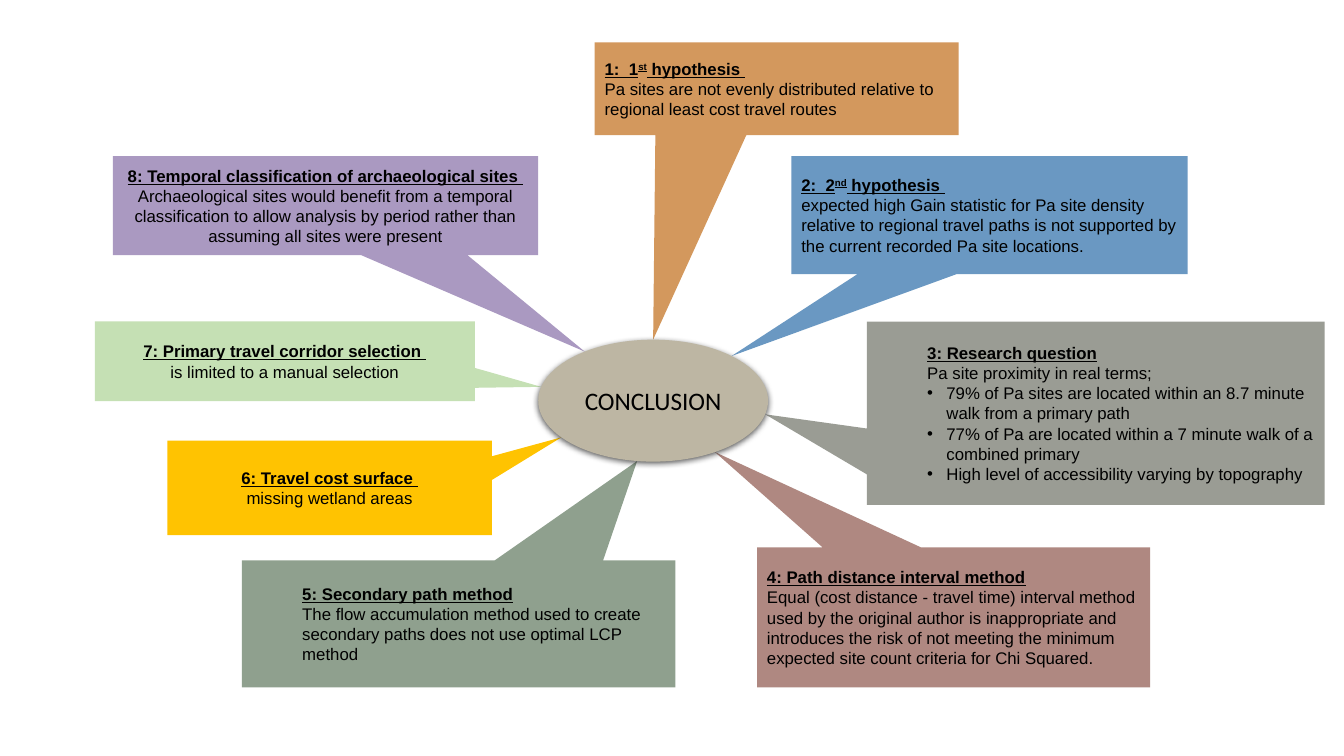
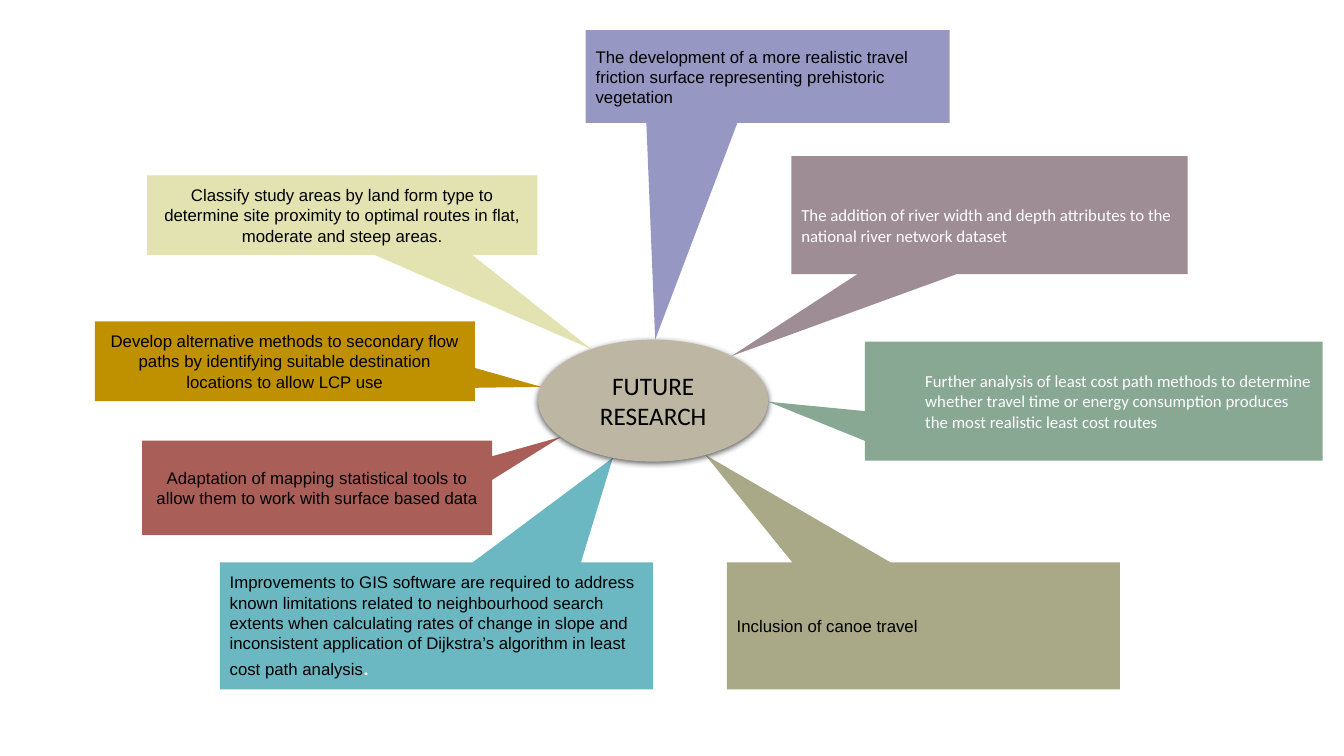
from dataclasses import dataclass
from math import cos, radians, sin, sqrt

from lxml import etree
from pptx import Presentation
from pptx.dml.color import RGBColor
from pptx.enum.shapes import MSO_SHAPE
from pptx.enum.text import MSO_ANCHOR, MSO_AUTO_SIZE, PP_ALIGN
from pptx.oxml.ns import qn
from pptx.util import Inches, Pt

LEFT, CENTER = PP_ALIGN.LEFT, PP_ALIGN.CENTER
CALLOUT = MSO_SHAPE.RECTANGULAR_CALLOUT
HUB_SHAPE = MSO_SHAPE.FLOWCHART_CONNECTOR
MIDDLE = MSO_ANCHOR.MIDDLE
NO_FIT = MSO_AUTO_SIZE.NONE
TITLE_ONLY = 5
SLIDE_W, SLIDE_H = Inches(13.33), Inches(7.5)


@dataclass(frozen=True)
class Theme:
    ink: str = "000000"
    light: str = "FFFFFF"
    hub: str = "BDB6A3"
    body_font: str = "Arial"
    title_font: str = "Calibri"
    body_size: float = 12
    stop_size: float = 16
    title_size: float = 18
    indent: float = 0.5
    hanging: float = 0.19


THEME = Theme()

# Boxes are left, top, width, height in percent of the slide.
HUB = (40.05, 44.93, 17.1, 16.13)
RIVER_BOX = (58.88, 20.67, 29.48, 15.6)
CORRIDOR_BOX = (7.05, 42.53, 28.28, 10.53)


@dataclass(frozen=True)
class Callout:
    """A box whose pointer meets the hub at angle (degrees, clockwise from the right).

    In heading, text between carets is superscript.
    """
    box: tuple
    angle: float
    fill: str
    body: str
    heading: str = ""
    bullets: tuple = ()
    align: PP_ALIGN = LEFT
    indent: float = 0
    font: str = THEME.body_font
    color: str = THEME.ink
    top_inset: float = 0.05
    stop: str = ""


CONCLUSION = [
    Callout((44.25, 5.6, 27.08, 12.27), -90, "D3985D",
            "Pa sites are not evenly distributed relative to regional least "
            "cost travel routes",
            heading="1:  1^st^ hypothesis "),
    Callout(RIVER_BOX, -47, "6A98C2",
            "expected high Gain statistic for Pa site density relative to "
            "regional travel paths is not supported by the current recorded "
            "Pa site locations.",
            heading="2:  2^nd^ hypothesis "),
    Callout((64.5, 42.53, 34.05, 24.27), 13, "9A9C94",
            "Pa site proximity in real terms;",
            heading="3: Research question", indent=THEME.indent,
            bullets=("79% of Pa sites are located within an 8.7 minute walk "
                     "from a primary path",
                     "77% of Pa are located within a 7 minute walk of a "
                     "combined primary",
                     "High level of accessibility varying by topography")),
    Callout((56.33, 72.4, 29.25, 18.53), 57.5, "AF8881",
            "Equal (cost distance - travel time) interval method used by the "
            "original author is inappropriate and introduces the risk of not "
            "meeting the minimum expected site count criteria for Chi Squared.",
            heading="4: Path distance interval method"),
    Callout((18, 74.13, 32.25, 16.8), 98, "8FA08E",
            "The flow accumulation method used to create secondary paths does "
            "not use optimal LCP method",
            heading="5: Secondary path method", indent=THEME.indent),
    Callout((12.45, 58.27, 24.15, 12.53), 143, "FFC301",
            "missing wetland areas",
            heading="6: Travel cost surface ", align=CENTER),
    Callout(CORRIDOR_BOX, 193, "C5E0B4",
            "is limited to a manual selection",
            heading="7: Primary travel corridor selection ", align=CENTER),
    Callout((8.4, 20.67, 31.65, 13.07), 233.5, "AA99C1",
            "Archaeological sites would benefit from a temporal classification "
            "to allow analysis by period rather than assuming all sites were "
            "present",
            heading="8: Temporal classification of archaeological sites ",
            align=CENTER),
]

FUTURE_RESEARCH = [
    Callout((43.58, 4, 27.08, 12.27), -89, "9797C3",
            "The development of a more realistic travel friction surface "
            "representing prehistoric vegetation"),
    Callout(RIVER_BOX, -47, "9F8D95",
            "The addition of river width and depth attributes to the national "
            "river network dataset",
            font=THEME.title_font, color=THEME.light, top_inset=0.25),
    Callout((64.35, 45.2, 34.05, 15.73), 1, "88A893",
            "Further analysis of least cost path methods to determine whether "
            "travel time or energy consumption produces the most realistic "
            "least cost routes",
            indent=THEME.indent, font=THEME.title_font, color=THEME.light),
    Callout((54.08, 74.4, 29.25, 16.8), 63, "A9A987",
            "Inclusion of canoe travel"),
    Callout((16.35, 74.4, 32.25, 16.8), 110.5, "6CB8C2",
            "Improvements to GIS software are required to address known "
            "limitations related to neighbourhood search extents when "
            "calculating rates of change in slope and inconsistent application "
            "of Dijkstra’s algorithm in least cost path analysis",
            stop="."),
    Callout((10.58, 58.27, 26.03, 12.53), 143.5, "A95F57",
            "Adaptation of mapping statistical tools to allow them to work with "
            "surface based data", align=CENTER),
    Callout(CORRIDOR_BOX, 193, "BF9000",
            "Develop alternative methods to secondary flow paths by "
            "identifying suitable destination locations to allow LCP use",
            align=CENTER),
    Callout((10.95, 23.2, 29.03, 10.53), 237.5, "E3E3B1",
            "Classify study areas by land form type to determine site "
            "proximity to optimal routes in flat, moderate and steep areas.",
            align=CENTER),
]


def place(box):
    """Turn a box in percent into lengths on the slide."""
    return [round(share * size / 100)
            for share, size in zip(box, (SLIDE_W, SLIDE_H) * 2)]


def center(box):
    left, top, width, height = box
    return left + width / 2, top + height / 2


def hub_point(angle):
    cx, cy = center(HUB)
    return (cx + HUB[2] / 2 * cos(radians(angle)),
            cy + HUB[3] / 2 * sin(radians(angle)))


def add_filled(slide, kind, box, fill):
    sp = slide.shapes.add_shape(kind, *place(box))
    sp.shadow.inherit = False
    sp.fill.solid()
    sp.fill.fore_color.rgb = RGBColor.from_string(fill)
    sp.line.fill.background()
    return sp


def style_run(r, font, size, color, strong=False):
    r.font.name = font
    r.font.size = Pt(size)
    r.font.color.rgb = RGBColor.from_string(color)
    r.font.bold = r.font.underline = strong


def add_run(p, text, *style, **options):
    r = p.add_run()
    r.text = text
    style_run(r, *style, **options)
    return r


def set_indent(p, left, hanging=0.0):
    pPr = p._p.get_or_add_pPr()
    pPr.set("marL", str(Inches(left)))
    pPr.set("indent", str(-Inches(hanging)))


def set_bullet(p):
    pPr = p._p.get_or_add_pPr()
    etree.SubElement(pPr, qn("a:buFont"), typeface="Arial")
    etree.SubElement(pPr, qn("a:buChar"), char="•")


def next_paragraph(tf):
    """Give the first paragraph while it is empty, else a new one."""
    first = tf.paragraphs[0]
    return tf.add_paragraph() if first.runs else first


def add_heading(p, text, *style):
    for i, part in enumerate(text.split("^")):
        r = add_run(p, part, *style, strong=True)
        if i % 2:
            r.font._element.set("baseline", "30000")


def add_callout(slide, item):
    sp = add_filled(slide, CALLOUT, item.box, item.fill)
    for i, (tip, middle, size) in enumerate(
            zip(hub_point(item.angle), center(item.box), item.box[2:])):
        sp.adjustments[i] = (tip - middle) / size

    tf = sp.text_frame
    tf.word_wrap = True
    tf.vertical_anchor = MIDDLE
    tf.margin_top = Inches(item.top_inset)
    style = item.font, THEME.body_size, item.color
    if item.heading:
        p = next_paragraph(tf)
        p.alignment = item.align
        set_indent(p, item.indent)
        add_heading(p, item.heading, *style)
    p = next_paragraph(tf)
    p.alignment = item.align
    set_indent(p, item.indent)
    add_run(p, item.body, *style)
    if item.stop:
        add_run(p, item.stop, THEME.title_font, THEME.stop_size, THEME.light)
    for text in item.bullets:
        p = next_paragraph(tf)
        p.alignment = item.align
        set_indent(p, item.indent + THEME.hanging, THEME.hanging)
        set_bullet(p)
        add_run(p, text, *style)


def add_soft_shadow(sp):
    effects = sp._element.spPr.find(qn("a:effectLst"))
    shadow = etree.SubElement(effects, qn("a:outerShdw"), blurRad=str(Pt(4.5)),
                              dist=str(Pt(1.5)), dir="5400000", rotWithShape="0")
    color = etree.SubElement(shadow, qn("a:srgbClr"), val=THEME.ink)
    etree.SubElement(color, qn("a:alpha"), val="63000")


def add_hub(slide, text):
    """Draw the ellipse and lay the slide title in the rectangle inside it."""
    add_soft_shadow(add_filled(slide, HUB_SHAPE, HUB, THEME.hub))
    cx, cy = center(HUB)
    width, height = (size / sqrt(2) for size in HUB[2:])
    title = slide.shapes.title
    title.left, title.top, title.width, title.height = place(
        (cx - width / 2, cy - height / 2, width, height))
    slide.shapes._spTree.append(title._element)
    tf = title.text_frame
    tf.text = text
    tf.word_wrap = True
    tf.auto_size = NO_FIT
    tf.vertical_anchor = MIDDLE
    p = tf.paragraphs[0]
    p.alignment = CENTER
    style_run(p.runs[0], THEME.title_font, THEME.title_size, THEME.ink)


def add_mind_map(prs, title, callouts):
    slide = prs.slides.add_slide(prs.slide_layouts[TITLE_ONLY])
    for item in callouts:
        add_callout(slide, item)
    add_hub(slide, title)


def main():
    prs = Presentation()
    prs.slide_width, prs.slide_height = SLIDE_W, SLIDE_H
    add_mind_map(prs, "CONCLUSION", CONCLUSION)
    add_mind_map(prs, "FUTURE RESEARCH", FUTURE_RESEARCH)
    prs.save("out.pptx")


if __name__ == "__main__":
    main()
